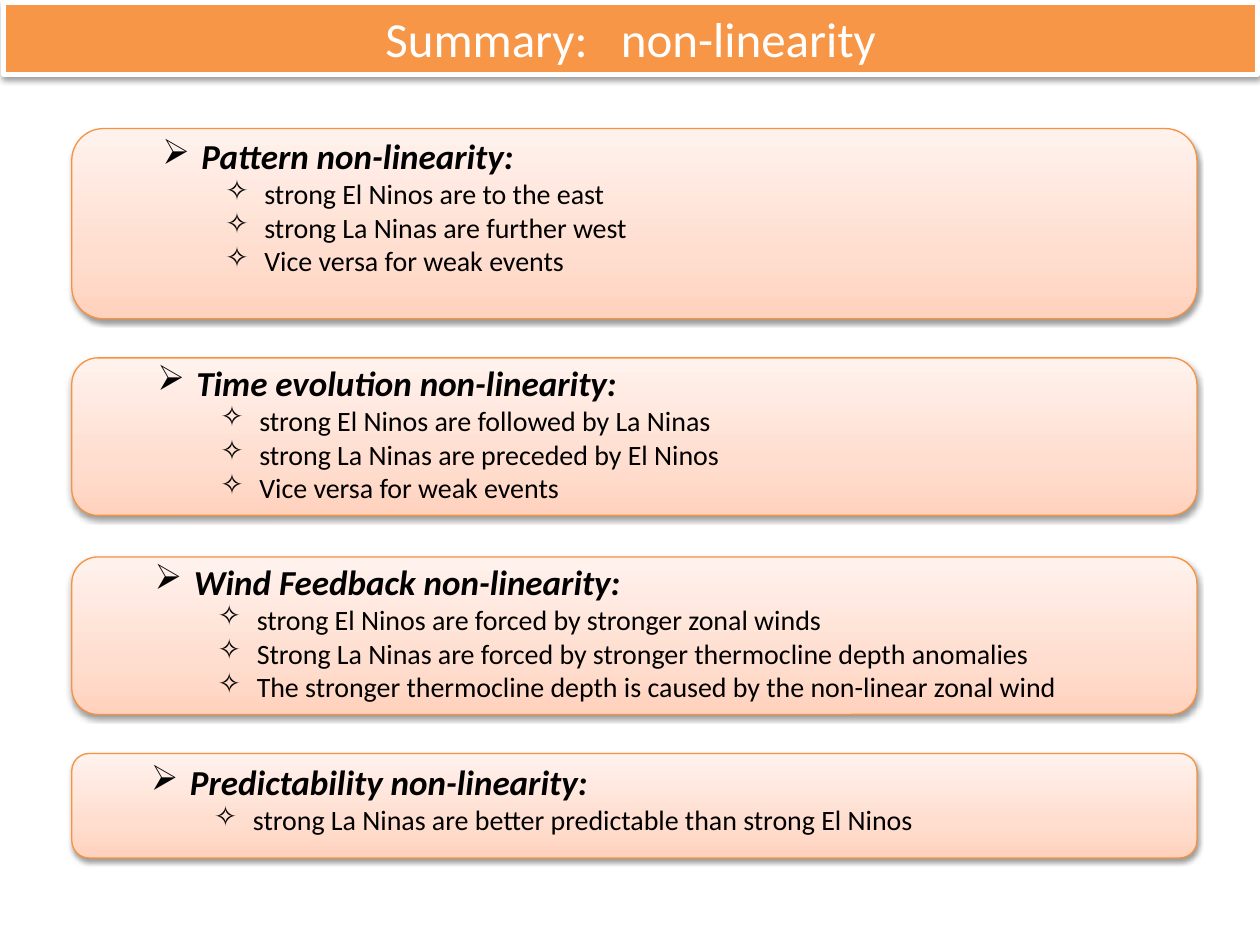
"""Build the summary slide on non-linearity."""
from copy import deepcopy

from pptx import Presentation
from pptx.dml.color import RGBColor
from pptx.enum.shapes import MSO_SHAPE
from pptx.enum.text import MSO_ANCHOR, MSO_AUTO_SIZE, PP_ALIGN
from pptx.oxml import parse_xml
from pptx.oxml.ns import nsdecls, qn
from pptx.util import Inches, Pt


def color(value):
    return RGBColor.from_string(value)


def add_shadow(sp):
    sp.shadow.inherit = False
    sp._element.spPr.find(qn("a:effectLst")).append(parse_xml(
        f'<a:outerShdw {nsdecls("a")} blurRad="{Pt(3.1)}" dist="{Pt(1.6)}" dir="5400000" '
        'rotWithShape="0"><a:srgbClr val="000000"><a:alpha val="38000"/></a:srgbClr></a:outerShdw>'))


STOPS = [(0, "FFD2BD"), (0.35, "FFDED0"), (1, "FFF2ED")]
# panel top and height, text left, top, width and height, heading, points
PANELS = [
    (1.02, 1.51, 1.19, 1.02, 3.95, 1.25, "Pattern non-linearity:",
     ["strong El Ninos are to the east",
      "strong La Ninas are further west",
      "Vice versa for weak events"]),
    (2.84, 1.25, 1.15, 2.82, 4.73, 1.28, "Time evolution non-linearity:",
     ["strong El Ninos are followed by La Ninas",
      "strong La Ninas are preceded by El Ninos",
      "Vice versa for weak events"]),
    (4.42, 1.25, 1.13, 4.4, 7.44, 1.25, "Wind Feedback non-linearity:",
     ["strong El Ninos are forced by stronger zonal winds",
      "Strong La Ninas are forced by stronger thermocline depth anomalies",
      "The stronger thermocline depth is caused by the non-linear zonal wind"]),
    (5.98, 0.83, 1.1, 5.99, 6.34, 0.71, "Predictability non-linearity:",
     ["strong La Ninas are better predictable than strong El Ninos"]),
]

prs = Presentation()
prs.slide_width, prs.slide_height = Inches(10), Inches(7.5)
s = prs.slides.add_slide(prs.slide_layouts[6])

for top, height, tx_left, tx_top, tx_width, tx_height, heading, points in PANELS:
    grp = s.shapes.add_group_shape()
    sp = grp.shapes.add_shape(MSO_SHAPE.ROUNDED_RECTANGLE, Inches(0.57), Inches(top),
                              Inches(8.93), Inches(height))
    sp.fill.gradient()
    sp.fill.gradient_angle = 90
    gs_list = sp._element.spPr.find(".//" + qn("a:gsLst"))
    gs_list.append(deepcopy(gs_list[0]))
    for stop, (position, value) in zip(sp.fill.gradient_stops, STOPS):
        stop.position = position
        stop.color.rgb = color(value)
    sp.line.color.rgb = color("F69240")
    sp.line.width = Pt(0.75)
    add_shadow(sp)

    tb = grp.shapes.add_textbox(Inches(tx_left), Inches(tx_top),
                                Inches(tx_width), Inches(tx_height))
    tf = tb.text_frame
    tf.word_wrap = False
    tf.auto_size = MSO_AUTO_SIZE.SHAPE_TO_FIT_TEXT
    for i, text in enumerate([heading] + points):
        is_heading = i == 0
        p = tf.paragraphs[0] if is_heading else tf.add_paragraph()
        p.level = 0 if is_heading else 1
        pPr = p._p.get_or_add_pPr()
        pPr.set("marL", str(Inches(0.31 if is_heading else 0.81)))
        pPr.set("indent", str(Inches(-0.31)))
        bullet = "➢" if is_heading else "✧"
        pPr.append(parse_xml(f'<a:buChar {nsdecls("a")} char="{bullet}"/>'))
        r = p.add_run()
        r.text = text
        r.font.name = "Calibri"
        r.font.size = Pt(20 if is_heading else 16)
        r.font.bold = r.font.italic = is_heading
        r.font.color.rgb = color("000000")

sp = s.shapes.add_shape(MSO_SHAPE.RECTANGLE, Inches(0.03), Inches(0.02),
                        Inches(9.95), Inches(0.57))
sp.fill.solid()
sp.fill.fore_color.rgb = color("F79646")
sp.line.color.rgb = color("FFFFFF")
sp.line.width = Pt(3)
add_shadow(sp)
tf = sp.text_frame
tf.word_wrap = True
tf.auto_size = MSO_AUTO_SIZE.SHAPE_TO_FIT_TEXT
tf.vertical_anchor = MSO_ANCHOR.TOP
p = tf.paragraphs[0]
p.alignment = PP_ALIGN.CENTER
r = p.add_run()
r.text = "Summary:   non-linearity"
r.font.name = "Calibri"
r.font.size = Pt(28)
r.font.color.rgb = color("FFFFFF")

prs.save("out.pptx")
